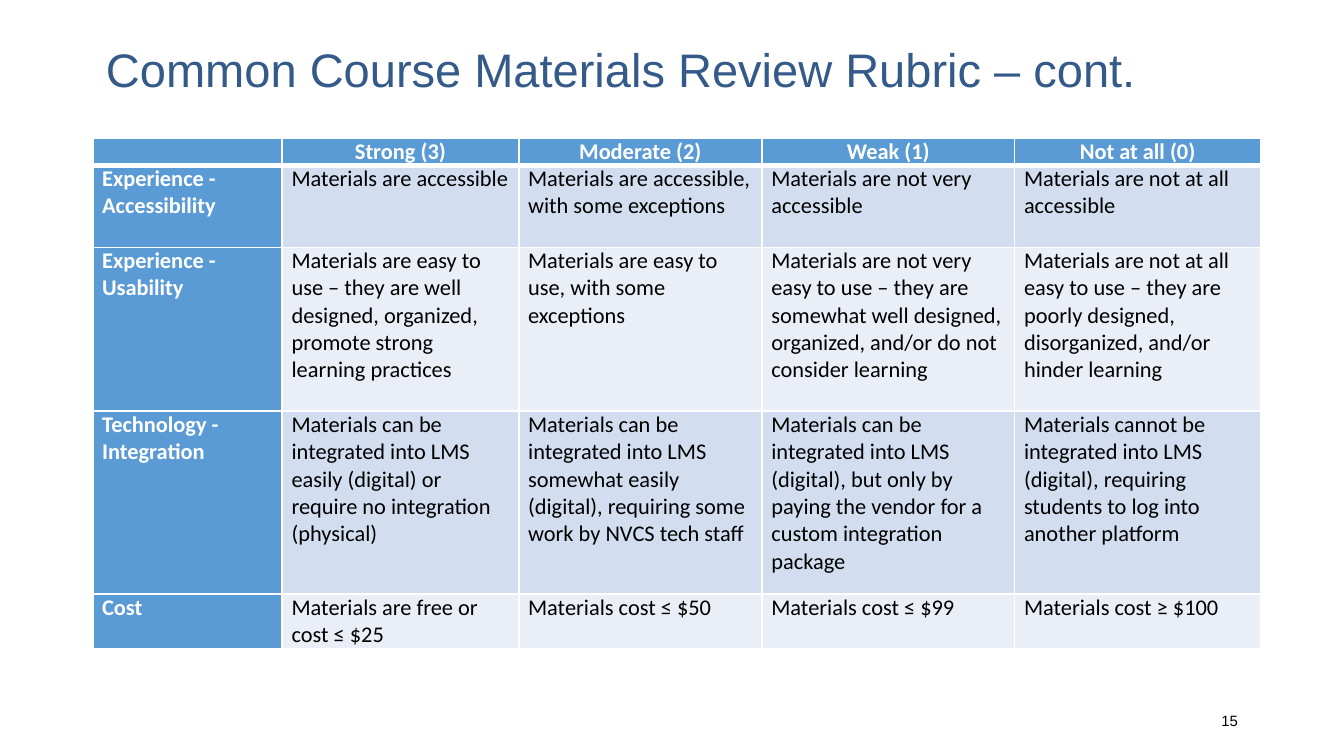
"""Build the course materials review rubric slide."""
from typing import NamedTuple

import pptx
import pptx.dml.color
import pptx.enum.text
import pptx.oxml.ns
import pptx.util
from lxml import etree

Inches = pptx.util.Inches
Pt = pptx.util.Pt
RGBColor = pptx.dml.color.RGBColor
PP_ALIGN = pptx.enum.text.PP_ALIGN
MSO_ANCHOR = pptx.enum.text.MSO_ANCHOR
qn = pptx.oxml.ns.qn

WHITE = RGBColor(0xFF, 0xFF, 0xFF)
BLACK = RGBColor(0x00, 0x00, 0x00)
NAVY = RGBColor(0x34, 0x5A, 0x8A)
BLUE = RGBColor(0x5B, 0x9B, 0xD5)
BANDS = (RGBColor(0xD2, 0xDE, 0xEF), RGBColor(0xEA, 0xEF, 0xF7))

SLIDE_WIDTH = Inches(10)
SLIDE_HEIGHT = SLIDE_WIDTH * 9 // 16
CELL_SIZE = 12
COLUMN_WIDTHS = (1.41, 1.76, 1.81, 1.88, 1.83)
HEADER_HEIGHT = 0.2
RATINGS = ("", "Strong (3)", "Moderate (2)", "Weak (1)", "Not at all (0)")


class Criterion(NamedTuple):
    name: str
    height: float
    levels: tuple[str, str, str, str]


class Label(NamedTuple):
    text: str
    box: tuple[float, float, float, float]
    size: float
    color: RGBColor
    align: PP_ALIGN
    anchor: MSO_ANCHOR
    line_spacing: float


CRITERIA = (
    Criterion("Experience - Accessibility", 0.61, (
        "Materials are accessible",
        "Materials are accessible, with some exceptions",
        "Materials are not very accessible",
        "Materials are not at all accessible",
    )),
    Criterion("Experience - \vUsability", 1.22, (
        "Materials are easy to use – they are well designed, organized, promote strong learning practices",
        "Materials are easy to use, with some exceptions",
        "Materials are not very easy to use – they are somewhat well designed, organized, and/or do not consider learning",
        "Materials are not at all easy to use – they are poorly designed, disorganized, and/or hinder learning",
    )),
    Criterion("Technology - Integration", 1.36, (
        "Materials can be integrated into LMS easily (digital) or require no integration (physical)",
        "Materials can be integrated into LMS somewhat easily (digital), requiring some work by NVCS tech staff",
        "Materials can be integrated into LMS (digital), but only by paying the vendor for a custom integration package",
        "Materials cannot be integrated into LMS (digital), requiring students to log into another platform",
    )),
    Criterion("Cost", 0.41, (
        "Materials are free or cost ≤ $25",
        "Materials cost ≤ $50",
        "Materials cost ≤ $99",
        "Materials cost ≥ $100",
    )),
)

LABELS = (
    Label("Common Course Materials Review Rubric – cont.", (0.69, 0.3, 9.25, 0.84),
          25.2, NAVY, PP_ALIGN.LEFT, MSO_ANCHOR.TOP, 0.9),
    Label("15", (7.06, 5.21, 2.25, 0.3), 8, BLACK, PP_ALIGN.RIGHT, MSO_ANCHOR.MIDDLE, 1.0),
)


def style_runs(paragraph, font: str, size: float, color: RGBColor, bold: bool = False) -> None:
    for run in paragraph.runs:
        run.font.name = font
        run.font.size = Pt(size)
        run.font.bold = bold
        run.font.color.rgb = color


def draw_label(slide, label: Label) -> None:
    frame = slide.shapes.add_textbox(*map(Inches, label.box)).text_frame
    frame.word_wrap = True
    frame.vertical_anchor = label.anchor
    frame.text = label.text
    paragraph = frame.paragraphs[0]
    paragraph.alignment = label.align
    paragraph.line_spacing = label.line_spacing
    style_runs(paragraph, "Arial", label.size, label.color)


def add_borders(cell, top: float, bottom: float) -> None:
    properties = cell._tc.get_or_add_tcPr()
    for side, width in (("L", 1), ("R", 1), ("T", top), ("B", bottom)):
        line = etree.SubElement(properties, qn(f"a:ln{side}"), w=str(Pt(width)))
        fill = etree.SubElement(line, qn("a:solidFill"))
        etree.SubElement(fill, qn("a:srgbClr"), val=str(WHITE))


def fill_cell(cell, text: str, row: int, column: int) -> None:
    is_header = row == 0
    is_heading = is_header or column == 0
    add_borders(cell, 3 if row == 1 else 1, 3 if is_header else 1)
    cell.fill.solid()
    cell.fill.fore_color.rgb = BLUE if is_heading else BANDS[(row - 1) % 2]
    cell.margin_left = cell.margin_right = Inches(0.06 if is_header else 0.07)
    cell.margin_top = cell.margin_bottom = 0
    cell.text_frame.text = text
    paragraph = cell.text_frame.paragraphs[0]
    paragraph.alignment = PP_ALIGN.CENTER if is_header else PP_ALIGN.LEFT
    style_runs(paragraph, "Calibri", CELL_SIZE, WHITE if is_heading else BLACK, is_heading)
    if not text:
        etree.SubElement(paragraph._p, qn("a:endParaRPr"), sz=str(CELL_SIZE * 100))


def draw_rubric(slide) -> None:
    heights = (HEADER_HEIGHT, *(criterion.height for criterion in CRITERIA))
    rows = (RATINGS, *((criterion.name, *criterion.levels) for criterion in CRITERIA))
    rubric = slide.shapes.add_table(
        len(rows), len(COLUMN_WIDTHS), Inches(0.69), Inches(1.03),
        Inches(sum(COLUMN_WIDTHS)), Inches(sum(heights)),
    ).table
    for column, width in zip(rubric.columns, COLUMN_WIDTHS):
        column.width = Inches(width)
    for row_index, (height, texts) in enumerate(zip(heights, rows)):
        rubric.rows[row_index].height = Inches(height)
        for column_index, text in enumerate(texts):
            fill_cell(rubric.cell(row_index, column_index), text, row_index, column_index)


def main() -> None:
    presentation = pptx.Presentation()
    presentation.slide_width = SLIDE_WIDTH
    presentation.slide_height = SLIDE_HEIGHT
    slide = presentation.slides.add_slide(presentation.slide_layouts[6])
    for label in LABELS:
        draw_label(slide, label)
    draw_rubric(slide)
    presentation.save("out.pptx")


if __name__ == "__main__":
    main()
